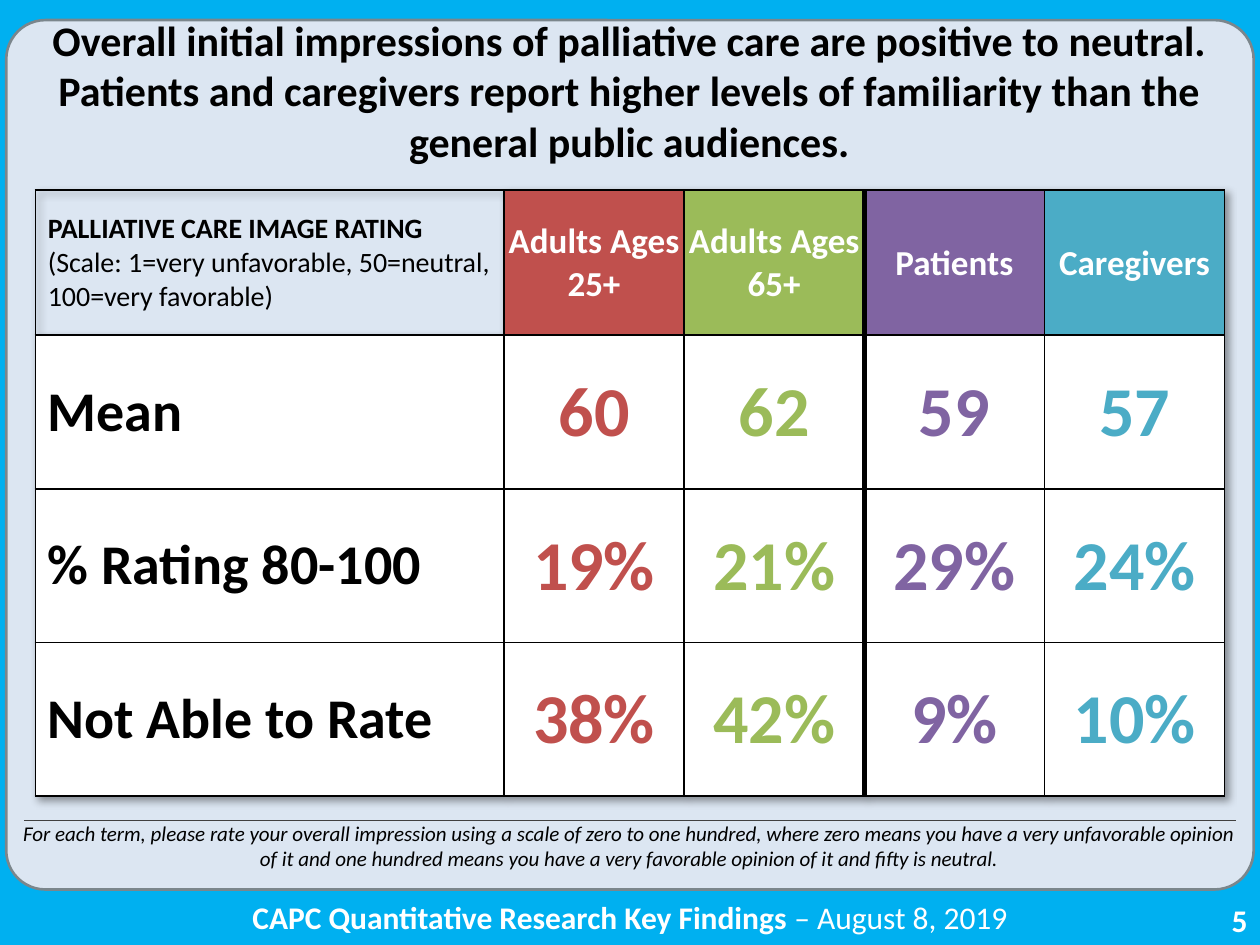
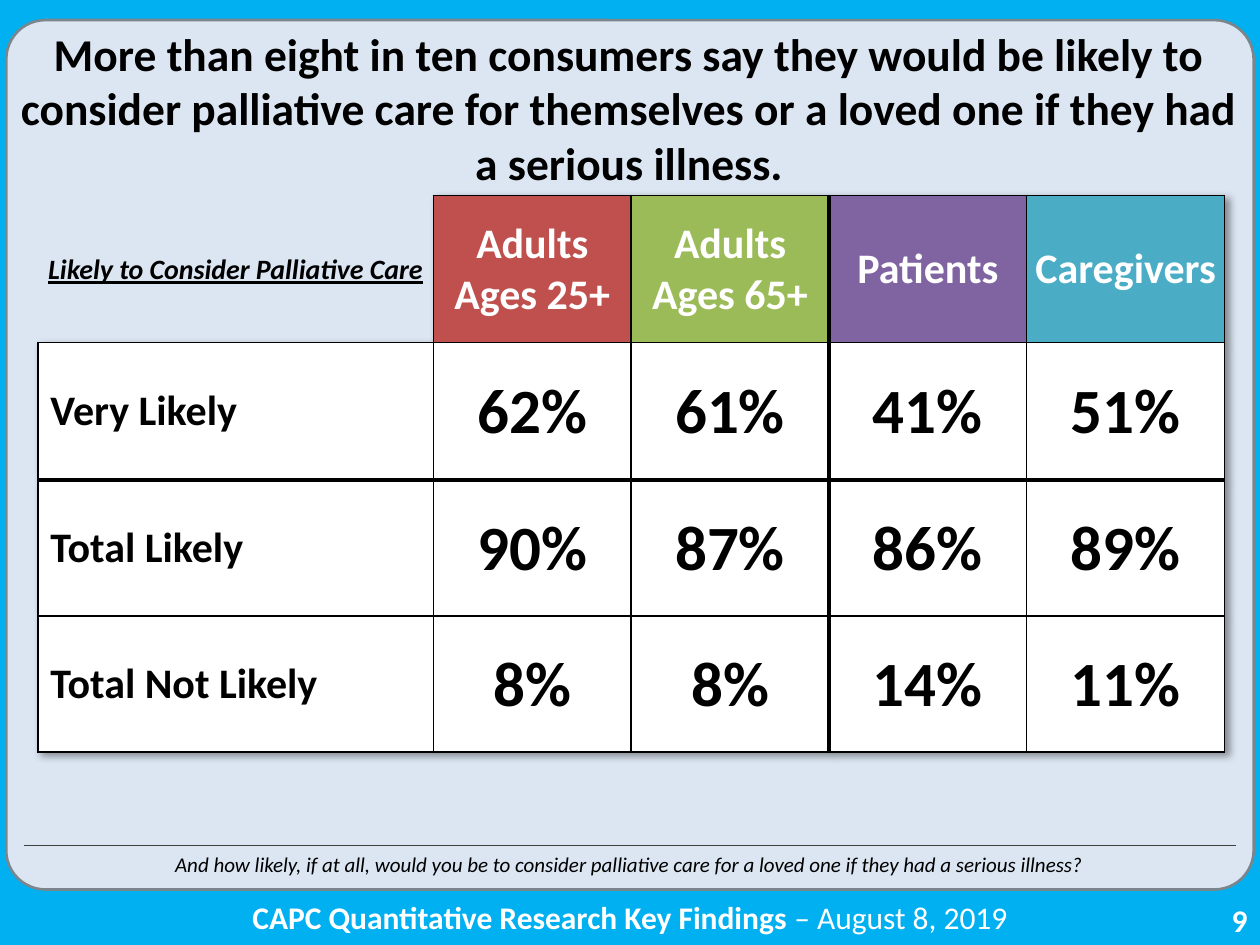
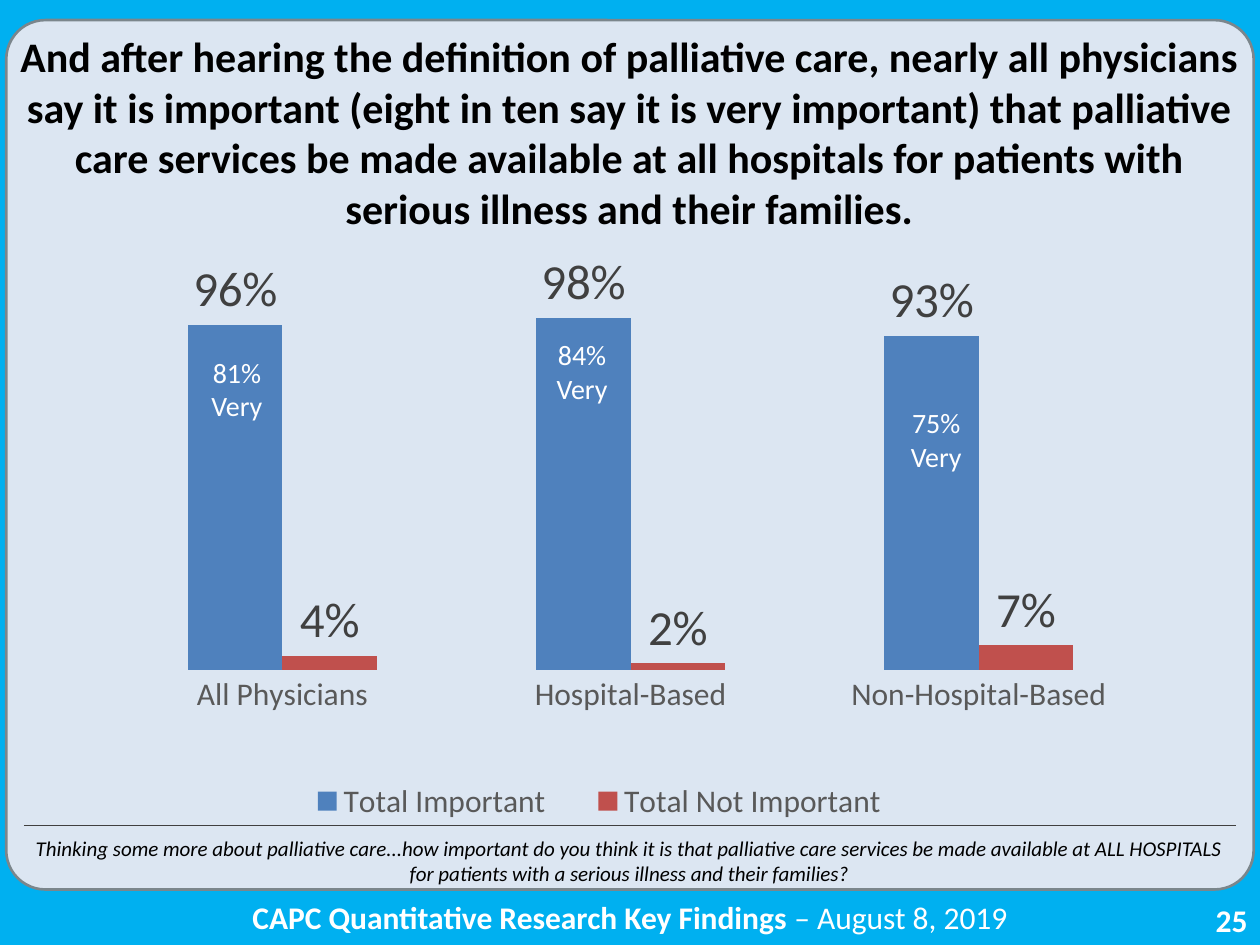
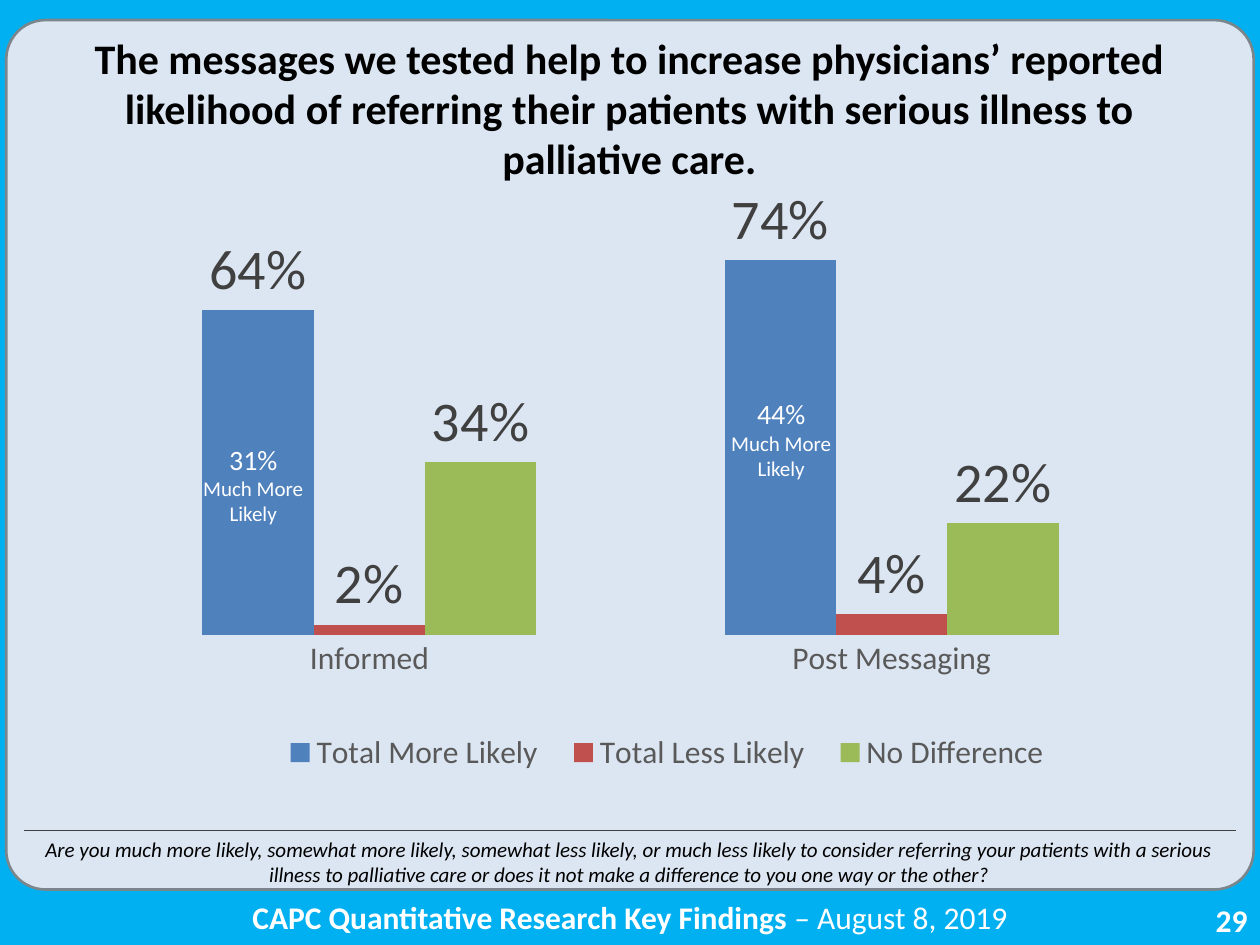
from lxml.etree import SubElement
from pptx import Presentation
from pptx.chart.data import CategoryChartData
from pptx.dml.color import RGBColor
from pptx.enum.chart import XL_CHART_TYPE as ChartType
from pptx.enum.chart import XL_LABEL_POSITION as LabelPosition
from pptx.enum.chart import XL_LEGEND_POSITION as LegendPosition
from pptx.enum.chart import XL_TICK_MARK as TickMark
from pptx.enum.shapes import MSO_CONNECTOR as Connector
from pptx.enum.shapes import MSO_SHAPE as Shape
from pptx.enum.text import MSO_ANCHOR as Anchor
from pptx.enum.text import MSO_AUTO_SIZE as AutoSize
from pptx.enum.text import PP_ALIGN as Align
from pptx.oxml import parse_xml
from pptx.oxml.ns import nsdecls, qn
from pptx.util import Inches, Pt

FONT = "Calibri"
SKY, PANEL, PANEL_EDGE = "00B0F0", "DCE6F2", "7B868C"
BLACK, WHITE, RULE = "000000", "FFFFFF", "404040"
AXIS_TEXT, LABEL_TEXT = "595959", "404040"
BLUE, RED, GREEN, PURPLE, TEAL = "4F81BD", "C0504D", "9BBB59", "8064A2", "4BACC6"

AUDIENCES = ["Adults Ages 25+", "Adults Ages 65+", "Patients", "Caregivers"]
AUDIENCE_COLORS = [RED, GREEN, PURPLE, TEAL]
SERIES_COLORS = [BLUE, RED, GREEN]
HEAVY_COLUMN = 2
NO_STYLE = "{2D5ABB26-0587-4C30-8999-92F81FD0307C}"


def rgb(color):
    return RGBColor.from_string(color)


def inches(values):
    return [Inches(value) for value in values]


def set_font(font, size, color, bold=False, italic=False, underline=False):
    font.name = FONT
    font.size = Pt(size)
    font.color.rgb = rgb(color)
    font.bold = bold
    font.italic = italic
    font.underline = underline


def style_text(frame, size, color, align=Align.CENTER, **look):
    for para in frame.paragraphs:
        para.alignment = align
        for span in para.runs:
            set_font(span.font, size, color, **look)


def set_margins(target, left, top, right, bottom):
    target.margin_left, target.margin_top = Inches(left), Inches(top)
    target.margin_right, target.margin_bottom = Inches(right), Inches(bottom)


def add_text(page, place, text, size, color, align=Align.CENTER, **look):
    frame = page.shapes.add_textbox(*inches(place)).text_frame
    frame.word_wrap = True
    frame.auto_size = AutoSize.SHAPE_TO_FIT_TEXT
    frame.text = text
    style_text(frame, size, color, align, **look)
    return frame


def add_panel(page):
    panel = page.shapes.add_shape(Shape.ROUNDED_RECTANGLE, *inches((0.05, 0.16, 9.9, 6.9)))
    panel.adjustments[0] = 0.045
    panel.shadow.inherit = False
    panel.fill.solid()
    panel.fill.fore_color.rgb = rgb(PANEL)
    panel.line.color.rgb = rgb(PANEL_EDGE)
    panel.line.width = Pt(1.5)


def add_footer(page, number):
    add_text(page, (7.75, 7.1, 2.25, 0.4), str(number), 18, WHITE, Align.RIGHT, bold=True)
    footer = add_text(page, (0.79, 7.08, 8.42, 0.4),
                      "CAPC Quantitative Research Key Findings ", 18, WHITE, bold=True)
    date = footer.paragraphs[0].add_run()
    date.text = "– August 8, 2019"
    set_font(date.font, 18, WHITE)


def set_title(page, text, top, height, size):
    title = page.shapes.title
    page.shapes.element.append(title.element)
    title.left, title.top, title.width, title.height = inches((0.07, top, 9.85, height))
    frame = title.text_frame
    frame.word_wrap = True
    frame.auto_size = AutoSize.NONE
    frame.vertical_anchor = Anchor.MIDDLE
    set_margins(frame, 0, 0, 0, 0)
    frame.text = text
    style_text(frame, size, BLACK, bold=True)


def add_page(deck, number, title, top, height, size=24):
    page = deck.slides.add_slide(deck.slide_layouts[5])
    add_panel(page)
    add_footer(page, number)
    set_title(page, title, top, height, size)
    return page


def add_question(page, text, top, height, rule_top):
    add_text(page, (0.07, top, 9.85, height), text, 12, BLACK, italic=True)
    rule = page.shapes.add_connector(Connector.STRAIGHT, *inches((0.19, rule_top, 9.81, rule_top)))
    rule.line.color.rgb = rgb(RULE)
    rule.line.width = Pt(0.75)
    SubElement(rule.element.spPr, qn("a:effectLst"))


def set_borders(cell, widths):
    properties = cell._tc.get_or_add_tcPr()
    for index, side in enumerate("LRTB"):
        width = widths[side]
        ink = f'<a:solidFill><a:srgbClr val="{BLACK}"/></a:solidFill>' if width else "<a:noFill/>"
        properties.insert(index, parse_xml(
            f'<a:ln{side} {nsdecls("a")} w="{Pt(width)}">{ink}</a:ln{side}>'))


def border_widths(row, column, heavy_row, open_corner):
    corner = open_corner and row == 0 and column == 0
    return {
        "L": 0 if corner else 3 if column == HEAVY_COLUMN + 1 else 1,
        "R": 3 if column == HEAVY_COLUMN else 1,
        "T": 0 if corner else 3 if heavy_row and row == heavy_row + 1 else 1,
        "B": 3 if heavy_row and row == heavy_row else 1,
    }


def add_table_shadow(properties):
    properties.insert(0, parse_xml(
        f'<a:effectLst {nsdecls("a")}><a:outerShdw blurRad="50800" dist="38100" dir="2700000" '
        f'algn="tl" rotWithShape="0"><a:srgbClr val="{BLACK}"><a:alpha val="40000"/></a:srgbClr>'
        '</a:outerShdw></a:effectLst>'))


def fill_cell(cell, text, fill, size, color, align=Align.CENTER):
    cell.text = text
    cell.vertical_anchor = Anchor.MIDDLE
    if align == Align.CENTER:
        set_margins(cell, 0.01, 0.01, 0.01, 0)
    if fill:
        cell.fill.solid()
        cell.fill.fore_color.rgb = rgb(fill)
    else:
        cell.fill.background()
    style_text(cell.text_frame, size, color, align, bold=True)


def add_rating_table(page, place, widths, heights, corner, rows, sizes, value_colors,
                     heavy_row=None, open_corner=False):
    holder = page.shapes.add_table(len(heights), len(widths), *inches(place))
    table = holder.table
    properties = holder.element.find(".//" + qn("a:tblPr"))
    properties.find(qn("a:tableStyleId")).text = NO_STYLE
    table.first_row = table.horz_banding = False
    add_table_shadow(properties)
    for column, width in zip(table.columns, widths):
        column.width = Inches(width)
    for row, height in zip(table.rows, heights):
        row.height = Inches(height)

    head_size, name_size, value_size = sizes
    fill_cell(table.cell(0, 0), corner, None, 16, BLACK,
              Align.CENTER if open_corner else Align.LEFT)
    for column, (audience, color) in enumerate(zip(AUDIENCES, AUDIENCE_COLORS), 1):
        fill_cell(table.cell(0, column), audience, color, head_size, WHITE)
    for row, (name, *values) in enumerate(rows, 1):
        fill_cell(table.cell(row, 0), name, WHITE, name_size, BLACK, Align.LEFT)
        for column, (value, color) in enumerate(zip(values, value_colors), 1):
            fill_cell(table.cell(row, column), value, WHITE, value_size, color)
    for row in range(len(heights)):
        for column in range(len(widths)):
            set_borders(table.cell(row, column),
                        border_widths(row, column, heavy_row, open_corner))
    return table


def set_layout(parent, index, box, inner=False):
    for old in parent.findall(qn("c:layout")):
        parent.remove(old)
    layout = parse_xml(f'<c:layout {nsdecls("c")}/>')
    manual = SubElement(layout, qn("c:manualLayout"))
    if inner:
        SubElement(manual, qn("c:layoutTarget")).set("val", "inner")
    for side in "xy":
        SubElement(manual, qn(f"c:{side}Mode")).set("val", "edge")
    for side, value in zip("xywh", box):
        SubElement(manual, qn(f"c:{side}")).set("val", str(value))
    parent.insert(index, layout)


def add_column_chart(page, top, categories, series, maximum, label_size, plot_box, legend_box):
    data = CategoryChartData(number_format="0%")
    data.categories = categories
    for name, values in series:
        data.add_series(name, values)
    chart = page.shapes.add_chart(ChartType.COLUMN_CLUSTERED,
                                  *inches((0.86, top, 8.29, 5.19)), data).chart
    chart.has_title = False
    set_font(chart.font, 10, BLACK)

    scale = chart.value_axis
    scale.minimum_scale, scale.maximum_scale = 0, maximum
    scale.has_major_gridlines = False
    scale.visible = False
    groups = chart.category_axis
    groups.major_tick_mark = groups.minor_tick_mark = TickMark.NONE
    groups.format.line.fill.background()
    set_font(groups.tick_labels.font, 18, AXIS_TEXT)

    chart.has_legend = True
    chart.legend.position = LegendPosition.BOTTOM
    chart.legend.include_in_layout = False
    set_font(chart.legend.font, 18, AXIS_TEXT)

    plot = chart.plots[0]
    plot.gap_width, plot.overlap = 169, 0
    plot.vary_by_categories = False
    for bars, color in zip(plot.series, SERIES_COLORS):
        bars.format.fill.solid()
        bars.format.fill.fore_color.rgb = rgb(color)
        labels = bars.data_labels
        labels.show_value = True
        labels.position = LabelPosition.OUTSIDE_END
        labels.number_format, labels.number_format_is_linked = "0%", False
        set_font(labels.font, label_size, LABEL_TEXT)

    set_layout(chart.element.find(".//" + qn("c:plotArea")), 0, plot_box, inner=True)
    set_layout(chart.element.find(".//" + qn("c:legend")), 1, legend_box)


def add_bar_note(page, left, top, height, text, detail_size=16):
    frame = add_text(page, (left, top, 1.62, height), text, 16, WHITE)
    for span in frame.paragraphs[0].runs[1:]:
        span.font.size = Pt(detail_size)


def add_image_rating(deck):
    page = add_page(
        deck, 5,
        "Overall initial impressions of palliative care are positive to neutral.\n"
        "Patients and caregivers report higher levels of familiarity than the general "
        "public audiences.", 0.29, 0.85)
    table = add_rating_table(
        page, (0.28, 1.51, 9.44, 4.81), [3.72] + [1.43] * 4, [1.15] + [1.22] * 3,
        "PALLIATIVE CARE IMAGE RATING\n"
        "(Scale: 1=very unfavorable, 50=neutral, 100=very favorable)",
        [("Mean", "60", "62", "59", "57"),
         ("% Rating 80-100", "19%", "21%", "29%", "24%"),
         ("Not Able to Rate", "38%", "42%", "9%", "10%")],
        (20, 32, 40), AUDIENCE_COLORS)
    scale_note = table.cell(0, 0).text_frame.paragraphs[1]
    scale_note.runs[0].font.bold = False
    add_question(
        page,
        "For each term, please rate your overall impression using a scale of zero to one "
        "hundred, where zero means you have a very unfavorable opinion of it and one hundred "
        "means you have a very favorable opinion of it and fifty is neutral.", 6.46, 0.5, 6.51)


def add_likely_to_consider(deck):
    page = add_page(
        deck, 9,
        "More than eight in ten consumers say they would be likely to consider palliative "
        "care for themselves or a loved one if they had a serious illness.", 0.52, 0.67, 26)
    table = add_rating_table(
        page, (0.3, 1.55, 9.41, 4.41), [3.14] + [1.57] * 4, [1.17, 1.09, 1.08, 1.08],
        "Likely to Consider Palliative Care",
        [("Very Likely", "62%", "61%", "41%", "51%"),
         ("Total Likely", "90%", "87%", "86%", "89%"),
         ("Total Not Likely", "8%", "8%", "14%", "11%")],
        (24, 24, 36), [BLACK] * 4, heavy_row=1, open_corner=True)
    style_text(table.cell(0, 0).text_frame, 16, BLACK, bold=True, italic=True, underline=True)
    add_question(
        page,
        "And how likely, if at all, would you be to consider palliative care for a loved one "
        "if they had a serious illness?", 6.71, 0.3, 6.71)


def add_importance(deck):
    page = add_page(
        deck, 25,
        "And after hearing the definition of palliative care, nearly all physicians say it is "
        "important (eight in ten say it is very important) that palliative care services be "
        "made available at all hospitals for patients with serious illness and their families.",
        0.67, 0.75)
    add_column_chart(
        page, 1.48, ["All Physicians", "Hospital-Based", "Non-Hospital-Based"],
        [("Total Important", (0.96, 0.98, 0.93)),
         ("Total Not Important", (0.04, 0.02, 0.07))],
        1.2, 28, (0, 0.08, 1, 0.66), (0.16, 0.9, 0.62, 0.08))
    for left, top, share in [(1.07, 2.77, "81%"), (3.81, 2.63, "84%"), (6.62, 3.17, "75%")]:
        add_bar_note(page, left, top, 0.64, f"{share}\vVery")
    add_question(
        page,
        "Thinking some more about palliative care...how important do you think it is that "
        "palliative care services be made available at ALL HOSPITALS for patients with a "
        "serious illness and their families?", 6.58, 0.5, 6.55)


def add_referral(deck):
    page = add_page(
        deck, 29,
        "The messages we tested help to increase physicians’ reported likelihood of referring "
        "their patients with serious illness to\npalliative care.", 0.52, 0.67)
    add_column_chart(
        page, 1.25, ["Informed", "Post Messaging"],
        [("Total More Likely", (0.64, 0.74)),
         ("Total Less Likely", (0.02, 0.04)),
         ("No Difference", (0.34, 0.22))],
        0.8, 32, (0, 0.11, 1, 0.62), (0.15, 0.87, 0.77, 0.08))
    for left, top, share in [(1.2, 3.46, "31%"), (5.39, 3.1, "44%")]:
        add_bar_note(page, left, top, 0.77, f"{share}\vMuch More\vLikely", 12)
    add_question(
        page,
        "Are you much more likely, somewhat more likely, somewhat less likely, or much less "
        "likely to consider referring your patients with a serious illness to palliative care "
        "or does it not make a difference to you one way or the other?", 6.59, 0.5, 6.59)


def main():
    deck = Presentation()
    deck.slide_width, deck.slide_height = Inches(10), Inches(7.5)
    backdrop = deck.slide_master.background.fill
    backdrop.solid()
    backdrop.fore_color.rgb = rgb(SKY)
    add_image_rating(deck)
    add_likely_to_consider(deck)
    add_importance(deck)
    add_referral(deck)
    deck.save("out.pptx")


if __name__ == "__main__":
    main()
